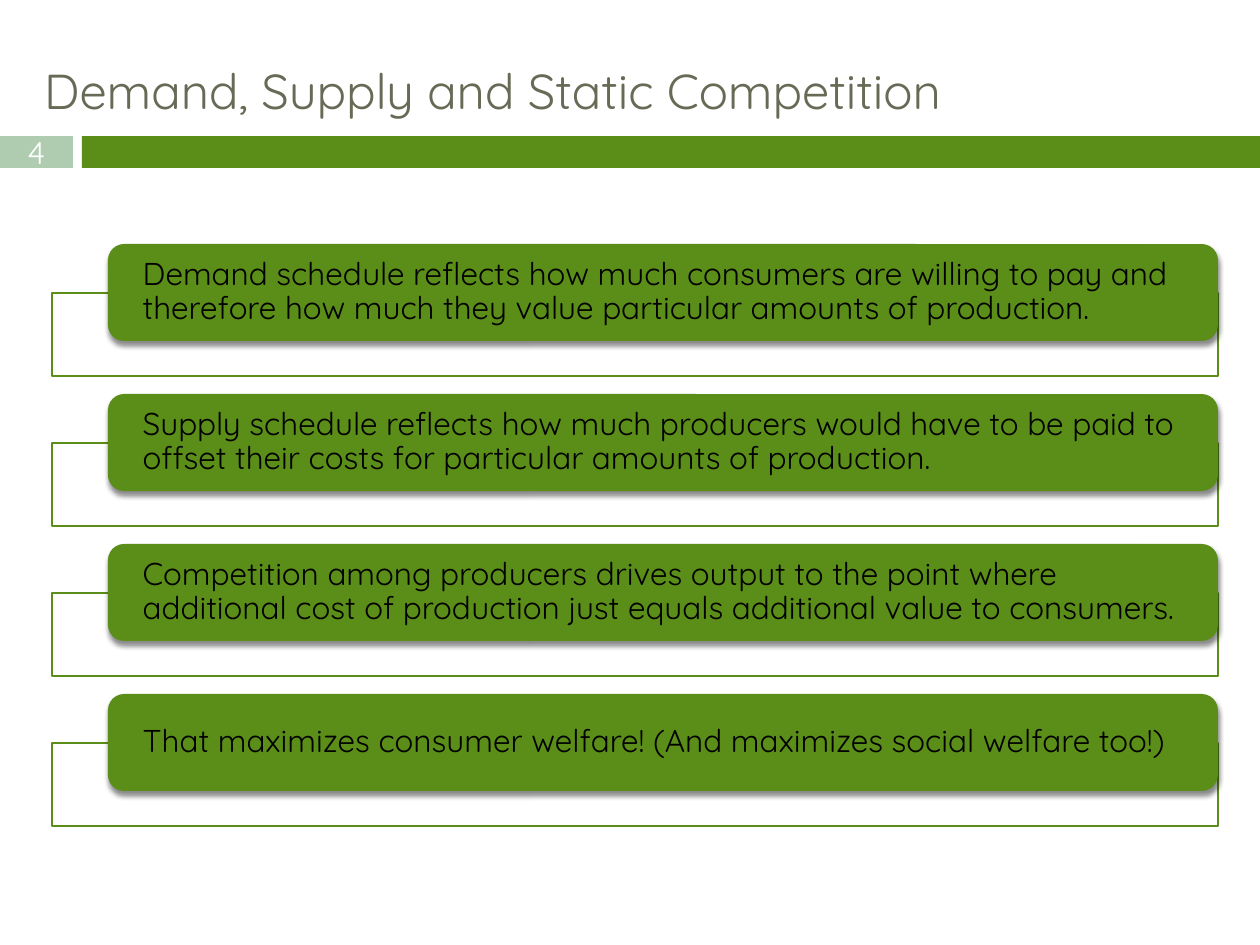
"""Build the slide on demand, supply and static competition."""
from dataclasses import dataclass

from lxml import etree
from pptx import Presentation, util as u
from pptx.dml.color import RGBColor
from pptx.enum import shapes as s, text as t
from pptx.oxml import ns, parse_xml

PX_PER_INCH = 126


@dataclass(frozen=True)
class Theme:
    font: str = "Quicksand"
    green: str = "5A8E19"
    sage: str = "B0CCB0"
    olive: str = "676A55"
    white: str = "FFFFFF"
    black: str = "000000"
    title_size: int = 28
    body_size: int = 18
    frame_line: float = 0.79


@dataclass(frozen=True)
class Area:
    left: int
    top: int
    width: int
    height: int

    def lowered(self, distance: int) -> "Area":
        return Area(self.left, self.top + distance, self.width, self.height)


THEME = Theme()
NUMBER_TAB = Area(0, 136, 73, 32)
HEADER_BAR = Area(82, 136, 1178, 32)
TITLE = Area(32, 54, 1239, 82)
FIRST_FRAME = Area(52, 293, 1166, 83)
FIRST_CARD = Area(108, 244, 1110, 97)
CARD_PITCH = 150
CARD_INSET = 30
STATEMENTS = (
    "Demand schedule reflects how much consumers are willing to pay and "
    "therefore how much they value particular amounts of production.",
    "Supply schedule reflects how much producers would have to be paid to "
    "offset their costs for particular amounts of production.",
    "Competition among producers drives output to the point where "
    "additional cost of production just equals additional value to consumers.",
    "That maximizes consumer welfare! (And maximizes social welfare too!)",
)


def px(length: int) -> u.Emu:
    return u.Emu(round(length * u.Inches(1) / PX_PER_INCH))


def place(area: Area) -> tuple:
    return px(area.left), px(area.top), px(area.width), px(area.height)


def add_block(slide, area: Area, fill: str, kind=s.MSO_SHAPE.RECTANGLE):
    block = slide.shapes.add_shape(kind, *place(area))
    block.shadow.inherit = False
    block.fill.solid()
    block.fill.fore_color.rgb = RGBColor.from_string(fill)
    block.line.fill.background()
    return block


def write(holder, words: str, *, size: int, color: str, align=t.PP_ALIGN.LEFT,
          anchor=t.MSO_ANCHOR.MIDDLE, side: int = 0, end: int = 0, spacing: float = 1.0) -> None:
    frame = holder.text_frame
    frame.word_wrap = True
    frame.vertical_anchor = anchor
    frame.margin_left = frame.margin_right = px(side)
    frame.margin_top = frame.margin_bottom = px(end)
    paragraph = frame.paragraphs[0]
    paragraph.text = words
    paragraph.alignment = align
    paragraph.line_spacing = spacing
    font = paragraph.runs[0].font
    font.name = THEME.font
    font.size = u.Pt(size)
    font.color.rgb = RGBColor.from_string(color)


def add_frame(slide, area: Area) -> None:
    frame = add_block(slide, area, THEME.white)
    frame.line.color.rgb = RGBColor.from_string(THEME.green)
    frame.line.width = u.Pt(THEME.frame_line)
    fill_color = frame.fill._xPr.find(ns.qn("a:solidFill"))[0]
    etree.SubElement(fill_color, ns.qn("a:alpha"), val="90000")


def add_card(slide, area: Area, words: str) -> None:
    card = add_block(slide, area, THEME.green, s.MSO_SHAPE.ROUNDED_RECTANGLE)
    effects = card._element.spPr.find(ns.qn("a:effectLst"))
    effects.append(parse_xml(
        f'<a:outerShdw {ns.nsdecls("a")} blurRad="{u.Pt(3)}" dist="{u.Pt(2.4)}" '
        f'dir="5400000" rotWithShape="0"><a:srgbClr val="{THEME.black}">'
        '<a:alpha val="45000"/></a:srgbClr></a:outerShdw>'))
    write(card, words, size=THEME.body_size, color=THEME.black, side=CARD_INSET, spacing=0.9)


def main() -> None:
    deck = Presentation()
    deck.slide_width, deck.slide_height = u.Inches(10), u.Inches(7.5)
    slide = deck.slides.add_slide(deck.slide_layouts[6])

    number_tab = add_block(slide, NUMBER_TAB, THEME.sage)
    write(number_tab, "4", size=THEME.body_size, color=THEME.white, align=t.PP_ALIGN.CENTER)
    add_block(slide, HEADER_BAR, THEME.green)
    title = slide.shapes.add_textbox(*place(TITLE))
    write(title, "Demand, Supply and Static Competition", size=THEME.title_size,
          color=THEME.olive, anchor=t.MSO_ANCHOR.TOP, side=12, end=6)

    for row, statement in enumerate(STATEMENTS):
        add_frame(slide, FIRST_FRAME.lowered(row * CARD_PITCH))
        add_card(slide, FIRST_CARD.lowered(row * CARD_PITCH), statement)

    deck.save("out.pptx")


if __name__ == "__main__":
    main()
